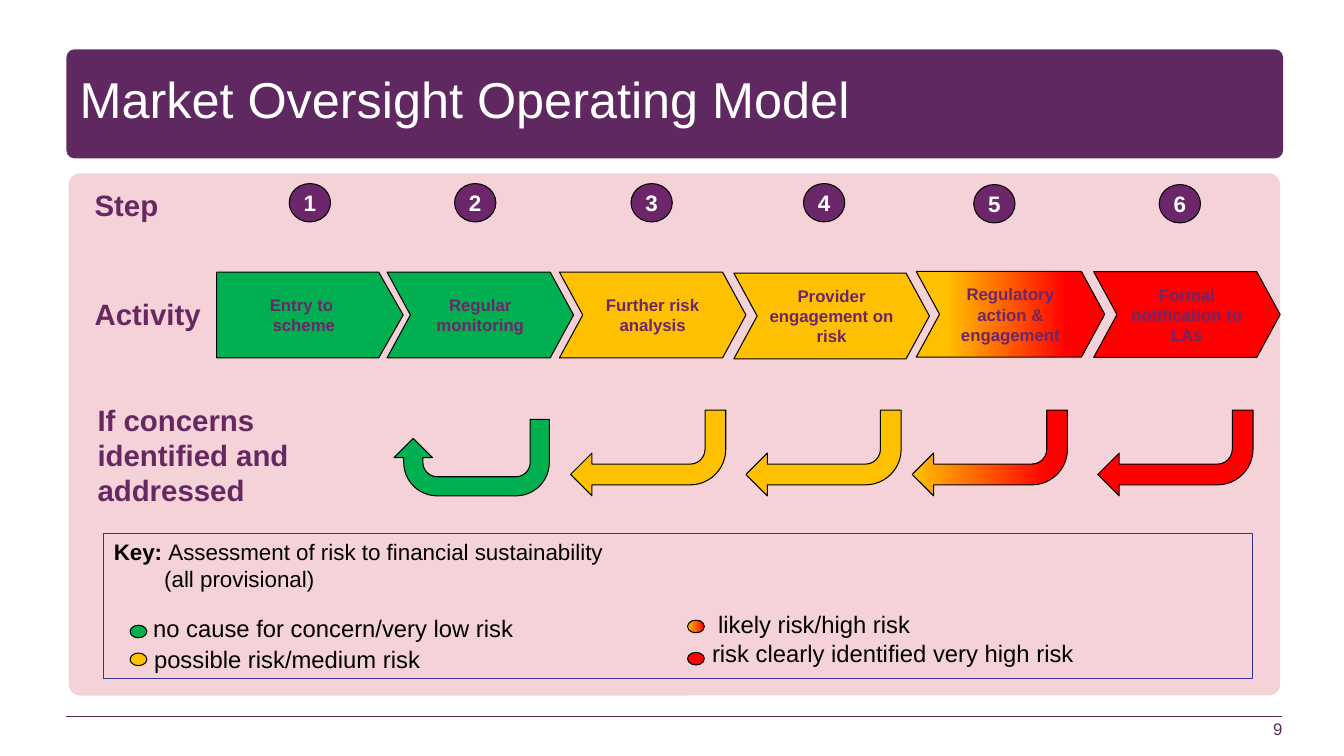
from dataclasses import dataclass
from lxml.etree import SubElement
from pptx import Presentation
from pptx.dml.color import RGBColor
from pptx.enum.shapes import MSO_CONNECTOR, MSO_SHAPE
from pptx.enum.text import MSO_ANCHOR, PP_ALIGN
from pptx.oxml.ns import qn
from pptx.util import Pt


@dataclass(frozen=True)
class Theme:
    font: str = "Arial"
    brand: str = "5F2861"
    label: str = "672861"
    step: str = "6C276A"
    panel: str = "EFBBC3"
    frame: str = "333399"
    white: str = "FFFFFF"
    black: str = "000000"
    green: str = "00B050"
    amber: str = "FFC000"
    red: str = "FF0000"
    title: int = 36
    head: int = 21
    item: int = 17
    body: int = 16
    small: int = 12


T = Theme()
rgb = RGBColor.from_string


def paint(shape, fill, line=None):
    """Fill with a colour, or a blend given as (position, colour) stops."""
    shape.shadow.inherit = False
    if fill is None:
        shape.fill.background()
    elif isinstance(fill, str):
        shape.fill.solid()
        shape.fill.fore_color.rgb = rgb(fill)
    else:
        shape.fill.gradient()
        shape.fill.gradient_angle = 0
        for stop, (pos, color) in zip(shape.fill.gradient_stops, fill):
            stop.position = pos
            stop.color.rgb = rgb(color)
    if line:
        shape.line.color.rgb = rgb(line)
        shape.line.width = Pt(0.75)
    else:
        shape.line.fill.background()


def draw(slide, kind, box, fill, line=None, adj=()):
    shape = slide.shapes.add_shape(kind, *map(Pt, box))
    paint(shape, fill, line)
    for i, value in enumerate(adj):
        shape.adjustments[i] = value
    return shape


def write(shape, text, size, color, bold=False, align=PP_ALIGN.LEFT,
          anchor=MSO_ANCHOR.TOP, inset=None, wrap=True):
    frame = shape.text_frame
    frame.text = text
    frame.word_wrap = wrap
    frame.vertical_anchor = anchor
    if inset is not None:
        frame.margin_left = frame.margin_right = Pt(inset)
        frame.margin_top = frame.margin_bottom = Pt(inset)
    for para in frame.paragraphs:
        para.alignment = align
        for run in para.runs:
            run.font.name = T.font
            run.font.size = Pt(size)
            run.font.bold = bold
            run.font.color.rgb = rgb(color)
    return frame


def label(slide, box, text, size, color, **style):
    return write(slide.shapes.add_textbox(*map(Pt, box)), text, size, color, **style)


def header(slide, box):
    x, y, w, h = box
    draw(slide, MSO_SHAPE.ROUNDED_RECTANGLE, box, T.brand, adj=[0.072])
    frame = label(slide, (x + 9.4, y + 2.9, 616, 71.3), "Market Oversight Operating Model",
                  T.title, T.white, anchor=MSO_ANCHOR.MIDDLE, inset=0)
    frame.paragraphs[0].line_spacing = 0.85


def footer(slide, box):
    x, y, w, h = box
    rule = slide.shapes.add_connector(MSO_CONNECTOR.STRAIGHT, *map(Pt, (x + w, y, x, y)))
    rule.line.color.rgb = rgb(T.brand)
    rule.line.width = Pt(1)
    SubElement(rule.element.spPr, qn("a:effectLst"))
    label(slide, (x + w - 200, y + h - 36, 200, 36), "9", T.small, T.brand,
          align=PP_ALIGN.RIGHT, anchor=MSO_ANCHOR.BOTTOM, inset=0)


def panel(slide, box):
    back = draw(slide, MSO_SHAPE.ROUNDED_RECTANGLE, box, T.panel, adj=[0.022])
    color = back.element.spPr.find(qn("a:solidFill"))[0]
    SubElement(color, qn("a:alpha"), val="66000")


def steps(slide, box):
    x, y, w, h = box
    label(slide, (x, y - 0.8, 60.5, 32.4), "Step", T.head, T.label, bold=True, wrap=False)
    for num, (dx, dy) in enumerate([(146.1, 0), (264.2, 0), (390.2, 0), (513.4, 0),
                                    (635, 0.7), (767.5, 0.7)], 1):
        dot = draw(slide, MSO_SHAPE.OVAL, (x + dx, y + dy, 29.5, h), T.step, T.black)
        write(dot, str(num), T.body, T.white, bold=True, align=PP_ALIGN.CENTER,
              anchor=MSO_ANCHOR.MIDDLE, wrap=False)


def stages(slide, box):
    x, y, w, h = box
    label(slide, (x, y + 13.7, 98, 32.4), "Activity", T.head, T.label, bold=True)
    blend = [(0.16, T.amber), (0.8, T.red)]
    for dx, dy, wide, fill, text in [
        (94.3, 0, 133.2, T.green, "Entry to \vscheme"),
        (216, 0, 133.2, T.green, "Regular monitoring"),
        (339.1, 0, 133.2, T.amber, "Further risk analysis"),
        (463.7, 0.7, 139.7, T.amber, "Provider engagement on risk"),
        (594, -0.5, 134.6, blend, "Regulatory action & engagement"),
        (720.7, -0.3, 133.2, T.red, "Formal notification to LAs"),
    ]:
        first = text.startswith("Entry")
        kind = MSO_SHAPE.PENTAGON if first else MSO_SHAPE.CHEVRON
        stage = draw(slide, kind, (x + dx, y + dy, wide, h), fill, T.black,
                     [0.285 if first else 0.272])
        write(stage, text, T.small, T.step, bold=True, align=PP_ALIGN.CENTER,
              anchor=MSO_ANCHOR.MIDDLE)


def returns(slide, box):
    x, y, w, h = box
    label(slide, (x, y - 9.4, 161.3, 83.5), "If concerns\nidentified and\vaddressed",
          T.head, T.label, bold=True)
    wide = 110.9
    turn = draw(slide, MSO_SHAPE.U_TURN_ARROW, (x + 218.9, y + 6.5, wide, h - 6.5),
                T.green, T.black)
    turn.rotation = 180
    blend = [(0.12, T.red), (1, T.amber)]
    for dx, fill in [(344.9, T.amber), (470.2, T.amber), (589, blend), (721.5, T.red)]:
        bend = draw(slide, MSO_SHAPE.BENT_ARROW, (x + dx, y, wide, h), fill, T.black,
                    [0.242, 0.25, 0.25, 0.416])
        bend.rotation = 180


def legend(slide, box):
    x, y, w, h = box
    frame = write(draw(slide, MSO_SHAPE.RECTANGLE, box, None, T.frame),
                  "Key: Assessment of risk to financial sustainability\n(all provisional)",
                  T.body, T.black)
    first, second = frame.paragraphs
    first.text = "Key: "
    first.add_run().text = "Assessment of risk to financial sustainability"
    for run in first.runs:
        run.font.name = T.font
        run.font.size = Pt(T.body)
        run.font.color.rgb = rgb(T.black)
    first.runs[0].font.bold = True
    second._p.get_or_add_pPr().set("marL", str(Pt(36)))
    # Dot and wording for each risk level
    blend = [(0, T.amber), (1, T.red)]
    for dx, dot, tx, mid, fill, text in [
        (18.7, 70.2, 35.1, 67.8, T.green, "no cause for concern/very low risk"),
        (18.7, 90.1, 35.8, 89.9, T.amber, "possible risk/medium risk"),
        (416.9, 66.6, 438.7, 64.9, blend, "likely risk/high risk"),
        (416.9, 89.6, 434.4, 85.6, T.red, "risk clearly identified very high risk"),
    ]:
        draw(slide, MSO_SHAPE.OVAL, (x + dx, y + dot - 4.5, 12, 9), fill, T.black)
        label(slide, (x + tx, y + mid - 11, 320, 22), text, T.item, T.black,
              anchor=MSO_ANCHOR.MIDDLE, inset=0)


def main():
    deck = Presentation()
    deck.slide_width, deck.slide_height = Pt(960), Pt(540)
    slide = deck.slides.add_slide(deck.slide_layouts[6])
    header(slide, (47.5, 35.3, 869, 77.8))
    footer(slide, (47.5, 512, 868.5, 15.8))
    panel(slide, (49, 123.8, 865.4, 373))
    steps(slide, (60.5, 131.1, 854, 27.4))
    stages(slide, (60.5, 194.4, 854, 61.2))
    returns(slide, (62.6, 293, 852, 61.2))
    legend(slide, (74.2, 380.9, 820.8, 103.7))
    deck.save("out.pptx")


if __name__ == "__main__":
    main()
